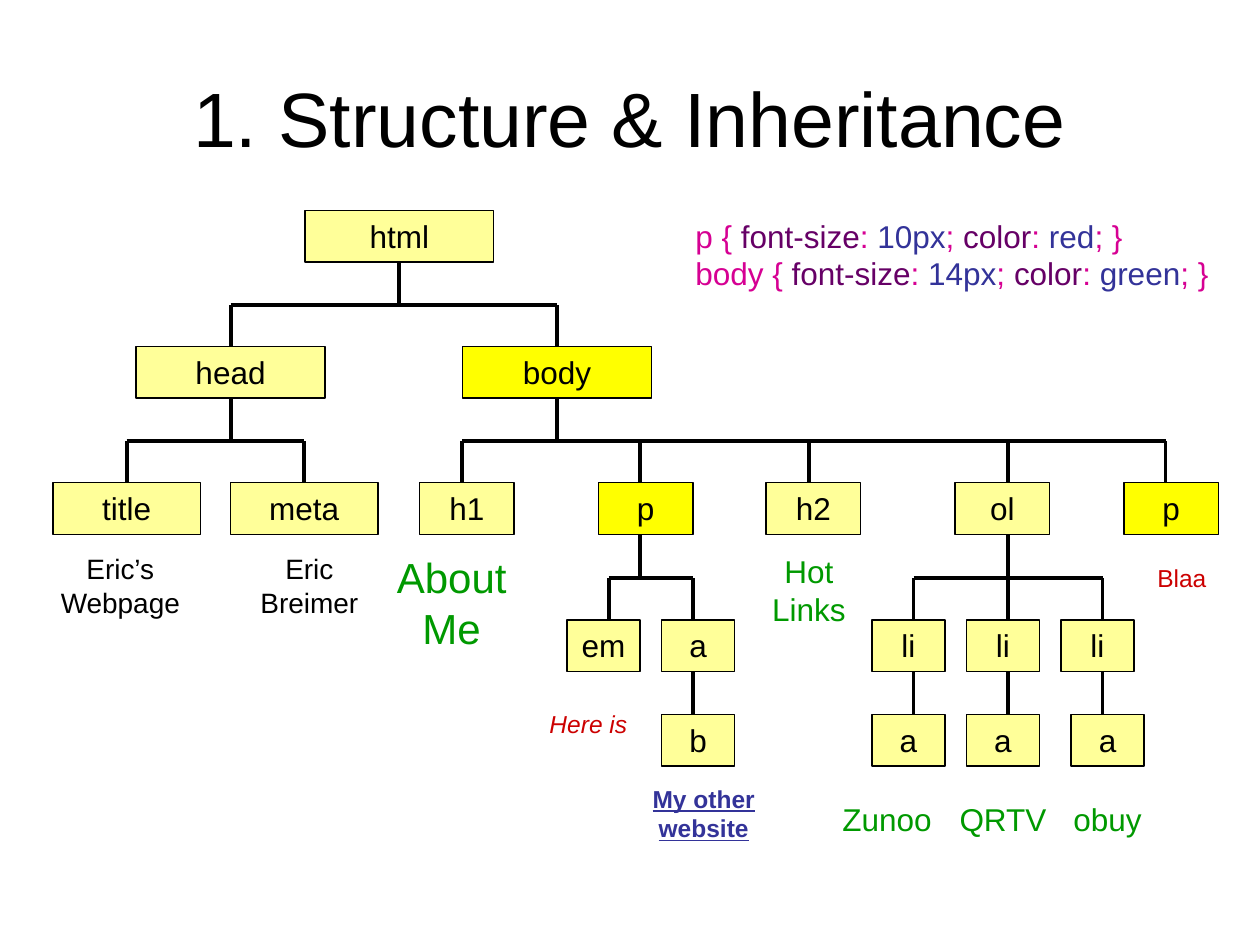
from dataclasses import dataclass, field
from typing import Optional

from lxml.etree import SubElement
from pptx import Presentation
from pptx.dml.color import RGBColor
from pptx.enum.shapes import MSO_CONNECTOR, MSO_SHAPE
from pptx.enum.text import MSO_ANCHOR, PP_ALIGN
from pptx.oxml.ns import qn
from pptx.util import Inches, Pt

BLACK = RGBColor(0x00, 0x00, 0x00)
PALE = RGBColor(0xFF, 0xFF, 0x99)
BRIGHT = RGBColor(0xFF, 0xFF, 0x00)
GREEN = RGBColor(0x00, 0x99, 0x00)
RED = RGBColor(0xCC, 0x00, 0x00)
BLUE = RGBColor(0x33, 0x33, 0x99)
PINK = RGBColor(0xD6, 0x00, 0x93)
PURPLE = RGBColor(0x66, 0x00, 0x66)
FONT = "Arial"

TALL = 0.41  # height of every box
GAP = 0.33  # from a box down to the rail below it
ROWS = [1.67, 2.75, 3.83, 4.92, 5.67]
WIDE, MID, SLIM, TINY = 1.5, 1.17, 0.75, 0.58


@dataclass
class Node:
    text: str
    left: float
    width: float
    axis: Optional[float] = None  # x of its lines, when off centre
    fill: RGBColor = PALE
    kids: list["Node"] = field(default_factory=list)

    @property
    def stem(self) -> float:
        return self.left + self.width / 2 if self.axis is None else self.axis


@dataclass
class Label:
    text: str
    left: float
    top: float
    width: float
    height: float
    size: int
    color: RGBColor
    bold: bool = False
    italic: bool = False
    under: bool = False


# Element tree
ITEMS = [
    Node("li", left, TINY, axis, kids=[Node("a", low, TINY, axis)])
    for left, low, axis in [(6.92, 6.92, 7.25), (7.67, 7.67, 8), (8.42, 8.5, 8.75)]
]
HEAD = Node("head", 1.08, WIDE, kids=[
    Node("title", 0.42, MID),
    Node("meta", 1.83, MID),
])
BODY = Node("body", 3.67, WIDE, fill=BRIGHT, kids=[
    Node("h1", 3.33, SLIM, 3.67),
    Node("p", 4.75, SLIM, 5.08, BRIGHT, [
        Node("em", 4.5, TINY, 4.83),
        Node("a", 5.25, TINY, 5.5, kids=[Node("b", 5.25, TINY, 5.5)]),
    ]),
    Node("h2", 6.08, SLIM, 6.42),
    Node("ol", 7.58, SLIM, 8, kids=ITEMS),
    Node("p", 8.92, SLIM, 9.25, BRIGHT),
])
TREE = Node("html", 2.42, WIDE, kids=[HEAD, BODY])

# Page content below the leaves
LABELS = [
    Label("Eric’s Webpage", 0.33, 4.33, 1.25, 0.64, 16, BLACK),
    Label("Eric Breimer", 1.83, 4.33, 1.25, 0.64, 16, BLACK),
    Label("About Me", 3, 4.33, 1.17, 0.9, 24, GREEN),
    Label("Here is", 4.17, 5.58, 1, 0.33, 14, RED, italic=True),
    Label("My other website", 4.92, 6.17, 1.33, 0.57, 14, BLUE, bold=True, under=True),
    Label("Hot Links", 5.92, 4.33, 1, 0.7, 18, GREEN),
    Label("Zunoo", 6.5, 6.3, 1.08, 0.4, 18, GREEN),
    Label("QRTV", 7.5, 6.3, 0.92, 0.4, 18, GREEN),
    Label("obuy", 8.33, 6.3, 0.92, 0.4, 18, GREEN),
    Label("Blaa", 8.92, 4.42, 0.92, 0.33, 14, RED),
]

# Style rules: selector, size, colour
RULES = [("p", "10px", "red"), ("body", "14px", "green")]


def style(para, size: int, color: RGBColor) -> None:
    para.font.name = FONT
    para.font.size = Pt(size)
    para.font.color.rgb = color


def draw_box(slide, node: Node, top: float):
    box = slide.shapes.add_shape(
        MSO_SHAPE.RECTANGLE, Inches(node.left), Inches(top),
        Inches(node.width), Inches(TALL))
    box.shadow.inherit = False
    box.fill.solid()
    box.fill.fore_color.rgb = node.fill
    box.line.color.rgb = BLACK
    box.line.width = Pt(0.75)
    frame = box.text_frame
    frame.vertical_anchor = MSO_ANCHOR.TOP
    para = frame.paragraphs[0]
    para.text = node.text
    para.alignment = PP_ALIGN.CENTER
    style(para, 18, BLACK)
    return box


def draw_line(slide, x1: float, y1: float, x2: float, y2: float):
    line = slide.shapes.add_connector(
        MSO_CONNECTOR.STRAIGHT, Inches(x1), Inches(y1), Inches(x2), Inches(y2))
    line.line.color.rgb = BLACK
    line.line.width = Pt(2.25)
    SubElement(line._element.spPr, qn("a:effectLst"))
    return line


def draw_tree(slide, node: Node, row: int = 0):
    """Draw a node, all below it and the lines between; return its box."""
    box = draw_box(slide, node, ROWS[row])
    if not node.kids:
        return box
    kids = [draw_tree(slide, kid, row + 1) for kid in node.kids]
    base, low = ROWS[row] + TALL, ROWS[row + 1]
    rail = low if len(kids) == 1 else low - GAP

    # Stem down from the parent
    stem = draw_line(slide, node.stem, base, node.stem, rail)
    if node.axis is None:
        stem.begin_connect(box, 2)
    if len(kids) == 1:
        return box

    # Rail and one drop to each child
    draw_line(slide, node.kids[0].stem, rail, node.kids[-1].stem, rail)
    for kid, shape in zip(node.kids, kids):
        drop = draw_line(slide, kid.stem, rail, kid.stem, low)
        if kid.axis is None:
            drop.end_connect(shape, 0)
    return box


def add_text(slide, left: float, top: float, width: float, height: float):
    frame = slide.shapes.add_textbox(
        Inches(left), Inches(top), Inches(width), Inches(height)).text_frame
    frame.word_wrap = True
    return frame


def draw_label(slide, label: Label) -> None:
    frame = add_text(slide, label.left, label.top, label.width, label.height)
    para = frame.paragraphs[0]
    para.text = label.text
    para.alignment = PP_ALIGN.CENTER
    style(para, label.size, label.color)
    para.font.bold = label.bold
    para.font.italic = label.italic
    para.font.underline = label.under


def draw_rules(slide) -> None:
    frame = add_text(slide, 5.42, 1.67, 4.33, 1)
    for i, (name, size, color) in enumerate(RULES):
        para = frame.add_paragraph() if i else frame.paragraphs[0]
        style(para, 18, PINK)
        parts = [(name + " { ", PINK), ("font-size", PURPLE), (": ", PINK),
                 (size, BLUE), ("; ", PINK), ("color", PURPLE), (": ", PINK),
                 (color, BLUE), ("; }", PINK)]
        for text, tint in parts:
            run = para.add_run()
            run.text = text
            run.font.color.rgb = tint


def main() -> None:
    deck = Presentation()
    deck.slide_width, deck.slide_height = Inches(10), Inches(7.5)
    slide = deck.slides.add_slide(deck.slide_layouts[5])

    # Title
    title = slide.shapes.title
    title.left, title.top = Inches(0.5), Inches(0.3)
    title.width, title.height = Inches(9), Inches(1.25)
    title.text_frame.vertical_anchor = MSO_ANCHOR.MIDDLE
    para = title.text_frame.paragraphs[0]
    para.text = "1. Structure & Inheritance"
    para.alignment = PP_ALIGN.CENTER
    style(para, 44, BLACK)

    draw_tree(slide, TREE)
    for label in LABELS:
        draw_label(slide, label)
    draw_rules(slide)
    deck.save("out.pptx")


if __name__ == "__main__":
    main()
